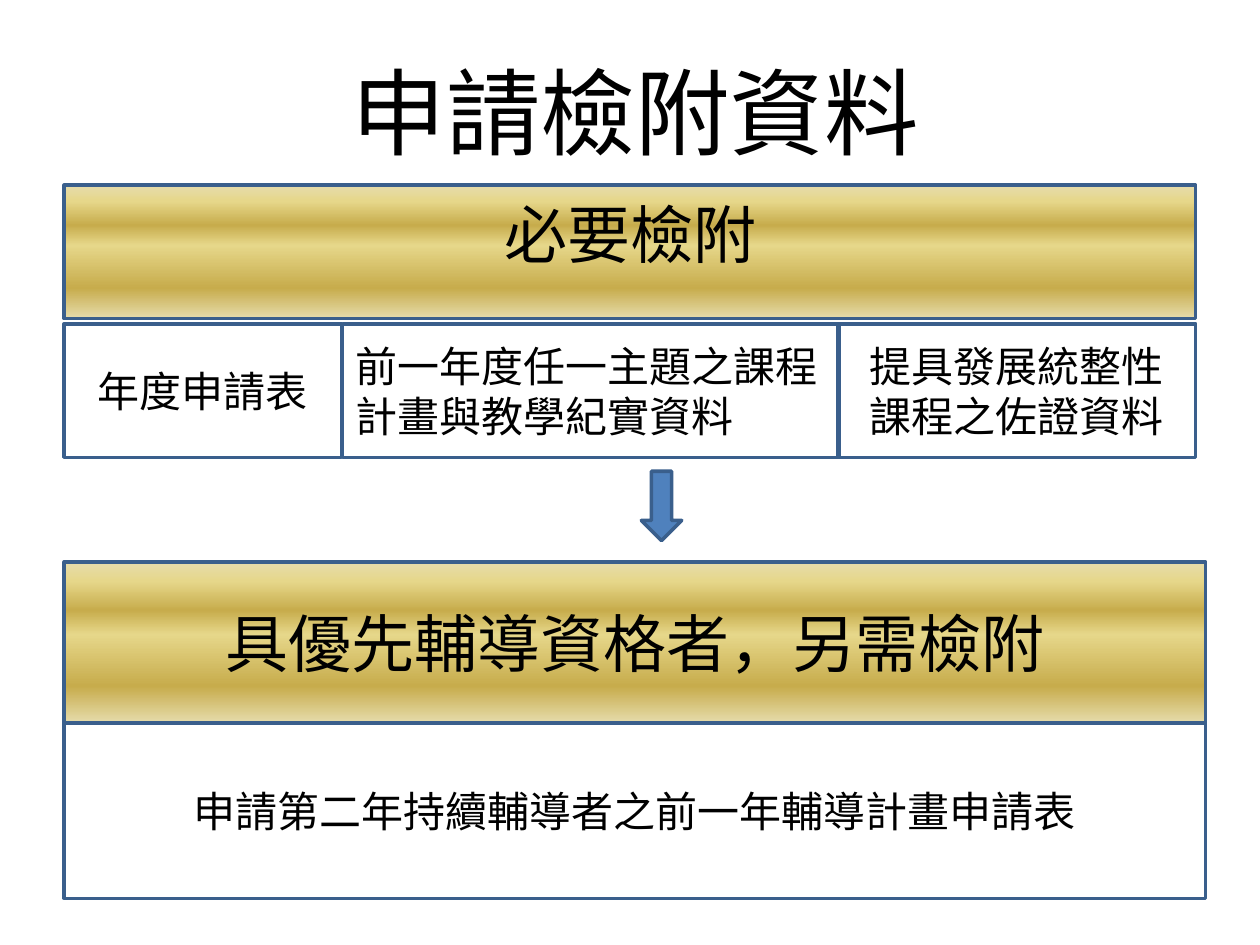
from lxml import etree
from pptx import Presentation
from pptx.dml.color import RGBColor
from pptx.enum import shapes, text
from pptx.oxml import ns
from pptx.util import Inches, Pt

GOLD = [(0, "E6DCAC"), (12, "E6D78A"), (30, "C7AC4C"),
        (45, "E6D78A"), (77, "C7AC4C"), (100, "E6DCAC")]
MID = text.PP_ALIGN.CENTER
LEFT = text.PP_ALIGN.LEFT


def color(code):
    return RGBColor.from_string(code)


def write(shape, words, size, font, align):
    frame = shape.text_frame
    frame.word_wrap = True
    frame.vertical_anchor = text.MSO_ANCHOR.MIDDLE
    para = frame.paragraphs[0]
    para.alignment = align
    run = para.add_run()
    run.text = words
    run.font.size = Pt(size)
    run.font.name = font
    run.font.color.rgb = color("000000")


deck = Presentation()
deck.slide_width = Inches(10)
deck.slide_height = Inches(7.5)
slide = deck.slides.add_slide(deck.slide_layouts[6])

title = slide.shapes.add_textbox(Inches(0.75), Inches(0.44), Inches(8.58), Inches(0.87))
write(title, "申請檢附資料", 54, "Noto Sans CJK SC", MID)

arrow = slide.shapes.add_shape(
    shapes.MSO_SHAPE.DOWN_ARROW, Inches(5.09), Inches(3.74), Inches(0.32), Inches(0.55))
arrow.shadow.inherit = False
arrow.fill.solid()
arrow.fill.fore_color.rgb = color("4F81BD")
arrow.line.color.rgb = color("3A5F8C")
arrow.line.width = Pt(2)

boxes = [
    ("必要檢附", 0.51, 1.47, 8.98, 1.06, 36, MID, 0.29),
    ("年度申請表", 0.51, 2.57, 2.2, 1.06, 24, MID, 0.05),
    ("前一年度任一主題之課程計畫與教學紀實資料", 2.72, 2.57, 3.94, 1.06, 24, LEFT, 0.05),
    ("提具發展統整性課程之佐證資料", 6.65, 2.57, 2.84, 1.06, 24, MID, 0.05),
    ("具優先輔導資格者，另需檢附", 0.51, 4.46, 9.06, 1.28, 36, MID, 0.05),
    ("申請第二年持續輔導者之前一年輔導計畫申請表", 0.51, 5.74, 9.06, 1.39, 24, MID, 0.05),
]
for words, left, top, width, height, size, align, foot in boxes:
    box = slide.shapes.add_shape(
        shapes.MSO_SHAPE.RECTANGLE, Inches(left), Inches(top), Inches(width), Inches(height))
    box.shadow.inherit = False
    box.line.color.rgb = color("3A5F8C")
    box.line.width = Pt(2)
    if size == 36:
        box.fill.gradient()
        box.fill.gradient_angle = 270
        stops = box._element.spPr.find(".//" + ns.qn("a:gsLst"))
        for old in list(stops):
            stops.remove(old)
        for place, code in GOLD:
            stop = etree.SubElement(stops, ns.qn("a:gs"), pos=str(place * 1000))
            etree.SubElement(stop, ns.qn("a:srgbClr"), val=code)
    else:
        box.fill.background()
    write(box, words, size, "Calibri", align)
    box.text_frame.margin_top = Inches(min(0.05, 0.29 - foot))
    box.text_frame.margin_bottom = Inches(foot)

deck.save("out.pptx")
